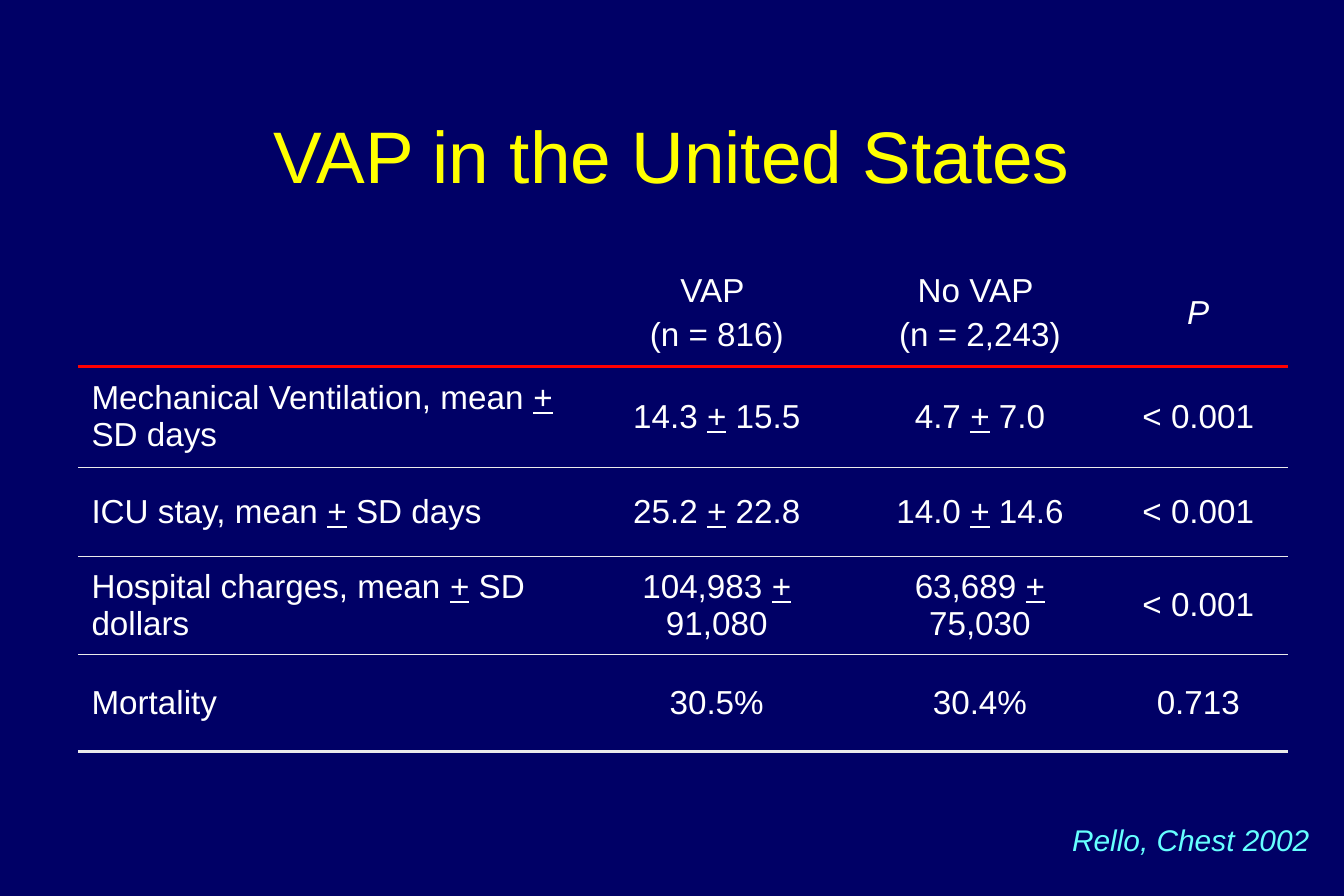
from lxml import etree
from pptx import Presentation
from pptx.dml.color import RGBColor
from pptx.enum.text import MSO_ANCHOR, PP_ALIGN
from pptx.oxml.ns import qn
from pptx.util import Inches, Pt

LEFT, CENTER = PP_ALIGN.LEFT, PP_ALIGN.CENTER
MIDDLE, TOP = MSO_ANCHOR.MIDDLE, MSO_ANCHOR.TOP
PLAIN_TABLE = "{2D5ABB26-0587-4C30-8999-92F81FD0307C}"
GRID_COLUMNS, GRID_ROWS = 90, 60

NAVY, YELLOW, WHITE = "000066", "FFFF00", "FFFFFF"
CYAN, RED, PALE = "66FFFF", "FF0000", "EAEAEA"

# Outcomes by group: label, VAP, no VAP, P value
OUTCOMES = [
    ["", "VAP \n(n = 816)", "No VAP \n(n = 2,243)", "P"],
    ["Mechanical Ventilation, mean + SD days", "14.3 + 15.5", "4.7 + 7.0", "< 0.001"],
    ["ICU stay, mean + SD days", "25.2 + 22.8", "14.0 + 14.6", "< 0.001"],
    ["Hospital charges, mean + SD dollars", "104,983 + 91,080", "63,689 + 75,030", "< 0.001"],
    ["Mortality", "30.5%", "30.4%", "0.713"],
]
COLUMN_WIDTHS = [33.75, 18, 17.25, 12]
ROW_HEIGHTS = [7.2, 6.7, 6, 6.55, 6.55]
# The rule under each row
RULES = [(RED, 2.25)] + [(PALE, 0.25)] * 3 + [(PALE, 2.25)]


def color(hex_value):
    return RGBColor.from_string(hex_value)


class Deck:
    """Holds the shared style and the current slide."""

    font = "Arial"

    def __init__(self, width, height):
        self.show = Presentation()
        self.show.slide_width, self.show.slide_height = Inches(width), Inches(height)
        self.column = self.show.slide_width / GRID_COLUMNS
        self.row = self.show.slide_height / GRID_ROWS

    def add_slide(self, background):
        self.slide = self.show.slides.add_slide(self.show.slide_layouts[5])
        self.slide.background.fill.solid()
        self.slide.background.fill.fore_color.rgb = color(background)

    def place(self, left, top, width, height):
        return (round(left * self.column), round(top * self.row),
                round(width * self.column), round(height * self.row))

    def set_text(self, frame, text, ink, align=LEFT, space=0, **style):
        """Fill a frame; every plus sign is underlined to read as plus-minus."""
        frame.word_wrap = True
        for index, line in enumerate(text.split("\n")):
            paragraph = frame.add_paragraph() if index else frame.paragraphs[0]
            paragraph.alignment = align
            paragraph.space_before = Pt(space)
            before, plus, after = line.partition("+")
            for part in filter(None, (before, plus, after)):
                run = paragraph.add_run()
                run.text = part
                run.font.color.rgb = color(ink)
                looks = {"name": self.font, "underline": part == "+", **style}
                for key, value in looks.items():
                    setattr(run.font, key, value)

    def title(self, text, box, ink, size):
        heading = self.slide.shapes.title
        heading.left, heading.top, heading.width, heading.height = self.place(*box)
        heading.text_frame.vertical_anchor = MIDDLE
        self.set_text(heading.text_frame, text, ink, CENTER, size=Pt(size))

    def caption(self, text, box, ink, **style):
        frame = self.slide.shapes.add_textbox(*self.place(*box)).text_frame
        frame.vertical_anchor = TOP
        self.set_text(frame, text, ink, **style)

    def border(self, cell, side, ink, weight):
        line = etree.SubElement(cell._tc.get_or_add_tcPr(), qn(f"a:{side}"), w=str(Pt(weight)))
        fill = etree.SubElement(line, qn("a:solidFill"))
        etree.SubElement(fill, qn("a:srgbClr"), val=ink)

    def table(self, content, left, top, widths, heights, rules, ink, size):
        box = self.place(left, top, sum(widths), sum(heights))
        grid = self.slide.shapes.add_table(len(heights), len(widths), *box).table
        grid.first_row = grid.horz_banding = False
        grid._tbl.tblPr.find(qn("a:tableStyleId")).text = PLAIN_TABLE
        for column, width in zip(grid.columns, widths):
            column.width = round(width * self.column)
        for r, (height, texts) in enumerate(zip(heights, content)):
            grid.rows[r].height = round(height * self.row)
            for c, text in enumerate(texts):
                cell = grid.cell(r, c)
                cell.vertical_anchor = MIDDLE
                cell.margin_left = cell.margin_right = Inches(0.11)
                if r:
                    self.border(cell, "lnT", *rules[r - 1])
                self.border(cell, "lnB", *rules[r])
                cell.fill.background()
                self.set_text(cell.text_frame, text, ink, CENTER if c else LEFT,
                              space=size * 0.2, size=Pt(size), italic=text == "P")


def main():
    deck = Deck(11.25, 7.5)
    deck.add_slide(NAVY)
    # Heading
    deck.title("VAP in the United States", (6.75, 5.35, 76.5, 10), YELLOW, 44)
    # Outcome table
    deck.table(OUTCOMES, 5.25, 17.35, COLUMN_WIDTHS, ROW_HEIGHTS, RULES, WHITE, 20)
    # Citation
    deck.caption("Rello, Chest 2002", (71, 54.65, 18.25, 4), CYAN, size=Pt(18), italic=True)
    deck.show.save("out.pptx")


if __name__ == "__main__":
    main()
